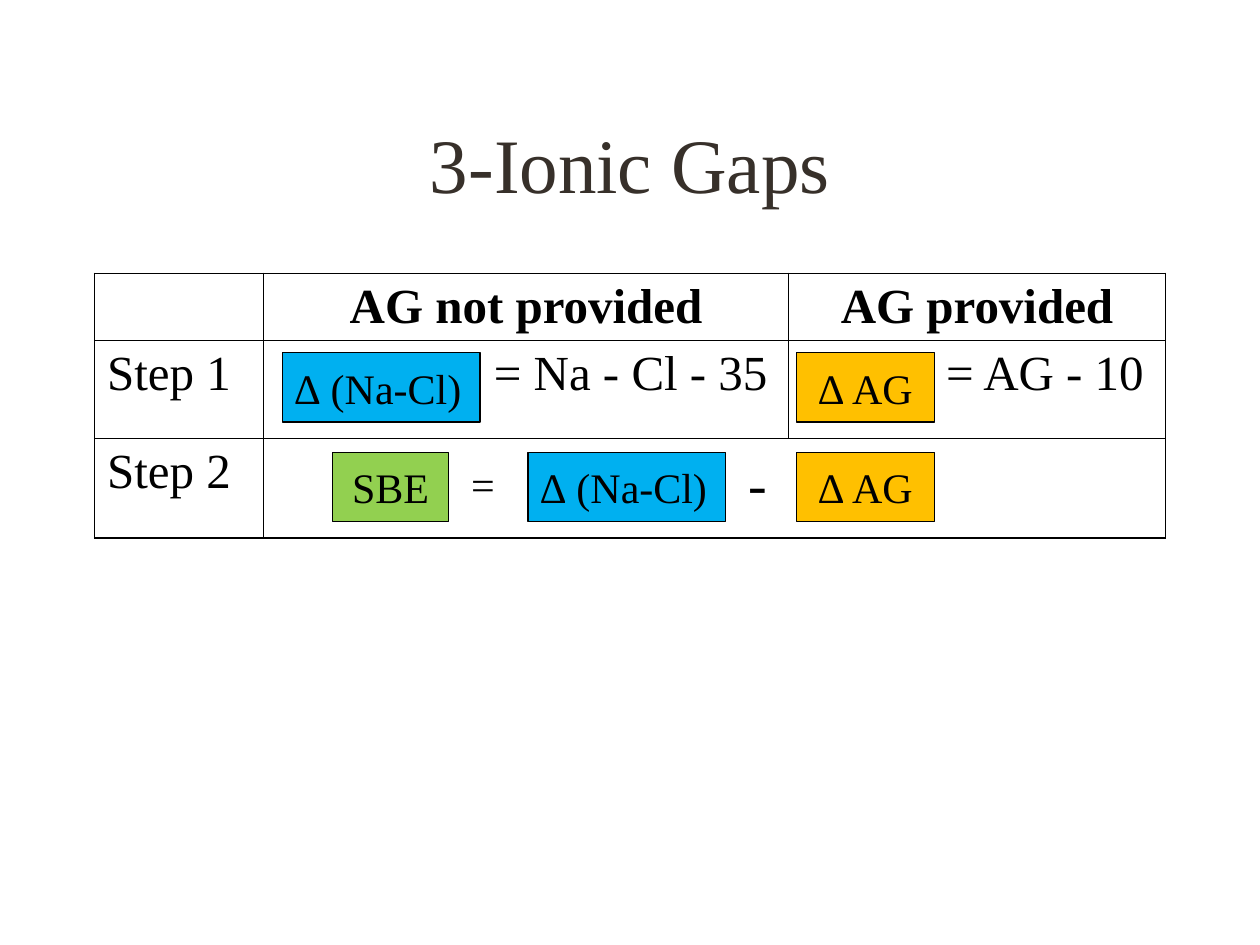
from dataclasses import dataclass

from lxml.etree import SubElement
from pptx import Presentation
from pptx.dml.color import RGBColor
from pptx.enum.shapes import MSO_SHAPE as Shape
from pptx.enum.text import MSO_ANCHOR as Anchor, PP_ALIGN as Align
from pptx.oxml.ns import qn
from pptx.util import Inches, Pt


@dataclass(frozen=True)
class Theme:
    font: str = "Times New Roman"
    ink: str = "000000"
    title_ink: str = "37302A"
    blue: str = "00B0F0"
    amber: str = "FFC000"
    green: str = "92D050"
    title_size: int = 44
    minus_size: int = 32
    table_size: int = 28
    term_size: int = 24
    border: float = 1
    outline: float = 0.75


@dataclass(frozen=True)
class Term:
    text: str
    width: float
    fill: str
    align: Align = Align.CENTER


@dataclass(frozen=True)
class Entry:
    row: int
    col: int
    text: str
    align: Align = Align.LEFT
    bold: bool = False
    indent: float = 1


THEME = Theme()

# The slide is a grid of 100 columns by 75 rows
COLUMNS, ROWS = 100, 75
SLIDE_WIDTH, SLIDE_HEIGHT = Inches(10), Inches(7.5)

TABLE_LEFT, TABLE_TOP = 7.5, 21.7
COLUMN_WIDTHS = (13.4, 41.7, 29.9)
ROW_HEIGHTS = (5.3, 7.8, 7.9)
TERM_HEIGHT = 5.5
STEP_1_TOP, STEP_2_TOP = 28, 35.9

SODIUM_CHLORIDE = Term("∆ (Na-Cl)", 15.7, THEME.blue, Align.LEFT)
ANION_GAP = Term("∆ AG", 11, THEME.amber)
BASE_EXCESS = Term("SBE", 9.2, THEME.green)

ENTRIES = (
    Entry(0, 1, "AG not provided", Align.CENTER, bold=True),
    Entry(0, 2, "AG provided", Align.CENTER, bold=True),
    Entry(1, 0, "Step 1"),
    Entry(1, 1, "= Na - Cl - 35", indent=18.3),
    Entry(1, 2, "= AG - 10", indent=12.5),
    Entry(2, 0, "Step 2"),
)


def across(columns: float) -> int:
    return round(SLIDE_WIDTH * columns / COLUMNS)


def down(rows: float) -> int:
    return round(SLIDE_HEIGHT * rows / ROWS)


def area(left: float, top: float, width: float, height: float) -> tuple:
    return across(left), down(top), across(width), down(height)


def write(frame, text: str, *, size: float, color: str = THEME.ink,
          align: Align = Align.LEFT, bold: bool = False) -> None:
    para = frame.paragraphs[0]
    para.alignment = align
    span = para.add_run()
    span.text = text
    span.font.name = THEME.font
    span.font.size = Pt(size)
    span.font.bold = bold
    span.font.color.rgb = RGBColor.from_string(color)


def add_term(shapes, term: Term, left: float, top: float) -> None:
    box = shapes.add_shape(Shape.RECTANGLE, *area(left, top, term.width, TERM_HEIGHT))
    box.shadow.inherit = False
    box.fill.solid()
    box.fill.fore_color.rgb = RGBColor.from_string(term.fill)
    box.line.color.rgb = RGBColor.from_string(THEME.ink)
    box.line.width = Pt(THEME.outline)
    box.text_frame.vertical_anchor = Anchor.MIDDLE
    write(box.text_frame, term.text, size=THEME.term_size, align=term.align)


def add_operator(shapes, text: str, place: tuple, size: float, wrap: bool) -> None:
    box = shapes.add_textbox(*area(*place))
    box.text_frame.word_wrap = wrap
    write(box.text_frame, text, size=size)


def add_borders(cell) -> None:
    properties = cell._tc.get_or_add_tcPr()
    for index, side in enumerate(("lnL", "lnR", "lnT", "lnB")):
        line = properties.makeelement(qn(f"a:{side}"), {"w": str(Pt(THEME.border))})
        properties.insert(index, line)
        fill = SubElement(line, qn("a:solidFill"))
        SubElement(fill, qn("a:srgbClr"), val=THEME.ink)


def add_steps_table(page) -> None:
    place = area(TABLE_LEFT, TABLE_TOP, sum(COLUMN_WIDTHS), sum(ROW_HEIGHTS))
    table = page.shapes.add_table(len(ROW_HEIGHTS), len(COLUMN_WIDTHS), *place).table
    table.first_row = table.horz_banding = False
    for column, width in zip(table.columns, COLUMN_WIDTHS):
        column.width = across(width)
    for row, height in zip(table.rows, ROW_HEIGHTS):
        row.height = down(height)
    table.cell(2, 1).merge(table.cell(2, 2))
    for cell in table.iter_cells():
        cell.fill.background()
        add_borders(cell)
    for entry in ENTRIES:
        cell = table.cell(entry.row, entry.col)
        cell.margin_left = across(entry.indent)
        write(cell.text_frame, entry.text, size=THEME.table_size,
              align=entry.align, bold=entry.bold)


def main() -> None:
    deck = Presentation()
    deck.slide_width, deck.slide_height = SLIDE_WIDTH, SLIDE_HEIGHT
    page = deck.slides.add_slide(deck.slide_layouts.get_by_name("Title Only"))

    # Title
    title = page.shapes.title
    title.left, title.top, title.width, title.height = area(7.5, 6.7, 85, 12.5)
    title.text_frame.vertical_anchor = Anchor.MIDDLE
    write(title.text_frame, "3-Ionic Gaps", size=THEME.title_size,
          color=THEME.title_ink, align=Align.CENTER)

    # Table with the terms of step 1
    add_steps_table(page)
    add_term(page.shapes, ANION_GAP, 63.2, STEP_1_TOP)
    add_term(page.shapes, SODIUM_CHLORIDE, 22.4, STEP_1_TOP)

    # Equation of step 2
    equation = page.shapes.add_group_shape().shapes
    add_term(equation, BASE_EXCESS, 26.4, STEP_2_TOP)
    add_operator(equation, "=", (36.4, STEP_2_TOP, 3.9, 5), THEME.term_size, wrap=False)
    add_term(equation, SODIUM_CHLORIDE, 41.9, STEP_2_TOP)
    add_term(equation, ANION_GAP, 63.2, STEP_2_TOP)
    add_operator(equation, "-", (58.4, 35.1, 3.1, 6.4), THEME.minus_size, wrap=True)

    deck.save("out.pptx")


if __name__ == "__main__":
    main()
